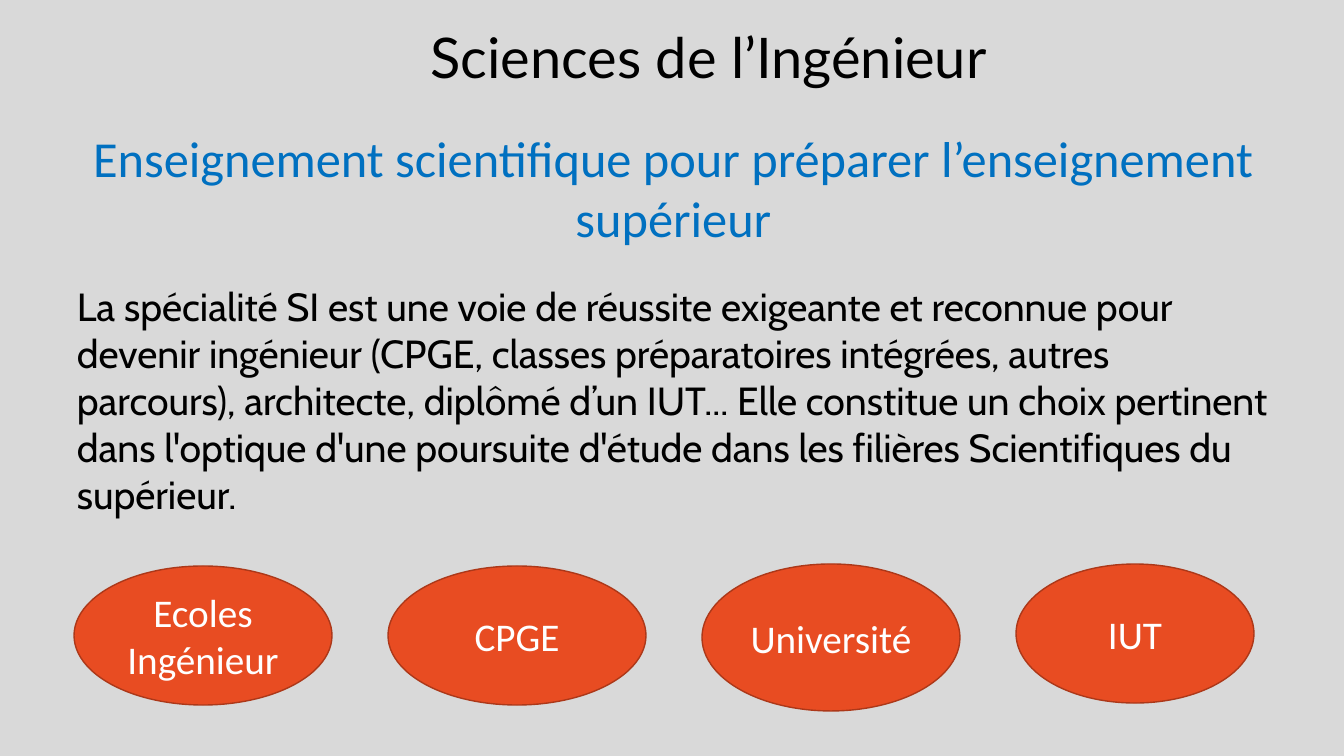
from pptx import Presentation
from pptx.dml.color import RGBColor
from pptx.enum.shapes import MSO_SHAPE as Shape
from pptx.enum.text import MSO_ANCHOR as Anchor, PP_ALIGN as Align
from pptx.util import Pt

SCALE = 914400 / 100.8
LEFT, PITCH = 74, 314
PATHS = [
    ("Ecoles\nIngénieur", 566, 258, 139),
    ("CPGE", 566, 258, 139),
    ("Université", 564, 258, 147),
    ("IUT", 564, 238, 139),
]
TITLE = "Sciences de l’Ingénieur"
HEADING = "Enseignement scientifique pour préparer l’enseignement supérieur"
BODY = (
    "La spécialité SI est une voie de réussite exigeante et reconnue pour "
    "devenir ingénieur (CPGE, classes préparatoires intégrées, autres "
    "parcours), architecte, diplômé d’un IUT... Elle constitue un choix "
    "pertinent dans l'optique d'une poursuite d'étude dans les filières "
    "Scientifiques du supérieur."
)


def px(*sizes):
    return [round(size * SCALE) for size in sizes]


def paint(target, color):
    target.rgb = RGBColor.from_string(color)


def fill(target, color):
    target.solid()
    paint(target.fore_color, color)


def write(frame, text, font, size, color, align):
    frame.word_wrap = True
    frame.text = text
    for para in frame.paragraphs:
        para.alignment = align
        for run in para.runs:
            run.font.name = font
            run.font.size = Pt(size)
            paint(run.font.color, color)


def add_text(slide, box, text, font, size, color, align=Align.CENTER):
    label = slide.shapes.add_textbox(*px(*box))
    write(label.text_frame, text, font, size, color, align)


def add_oval(slide, box, text):
    oval = slide.shapes.add_shape(Shape.OVAL, *px(*box))
    oval.shadow.inherit = False
    fill(oval.fill, "E84C22")
    fill(oval.line.fill, "AC3819")
    oval.line.width = Pt(1)
    oval.text_frame.vertical_anchor = Anchor.MIDDLE
    write(oval.text_frame, text, "Calibri", 28, "FFFFFF", Align.CENTER)


def main():
    deck = Presentation()
    deck.slide_width, deck.slide_height = px(1344, 756)
    slide = deck.slides.add_slide(deck.slide_layouts[6])
    fill(slide.background.fill, "D9D9D9")
    add_text(slide, (150, 18, 1117, 78), TITLE, "Lato", 40, "000000")
    add_text(slide, (17, 122, 1313, 132), HEADING, "Calibri", 36, "0070C0")
    add_text(slide, (67, 277, 1212, 248), BODY, "Cabin", 28, "000000", Align.LEFT)
    for index, (name, top, width, height) in enumerate(PATHS):
        add_oval(slide, (LEFT + index * PITCH, top, width, height), name)
    deck.save("out.pptx")


if __name__ == "__main__":
    main()
